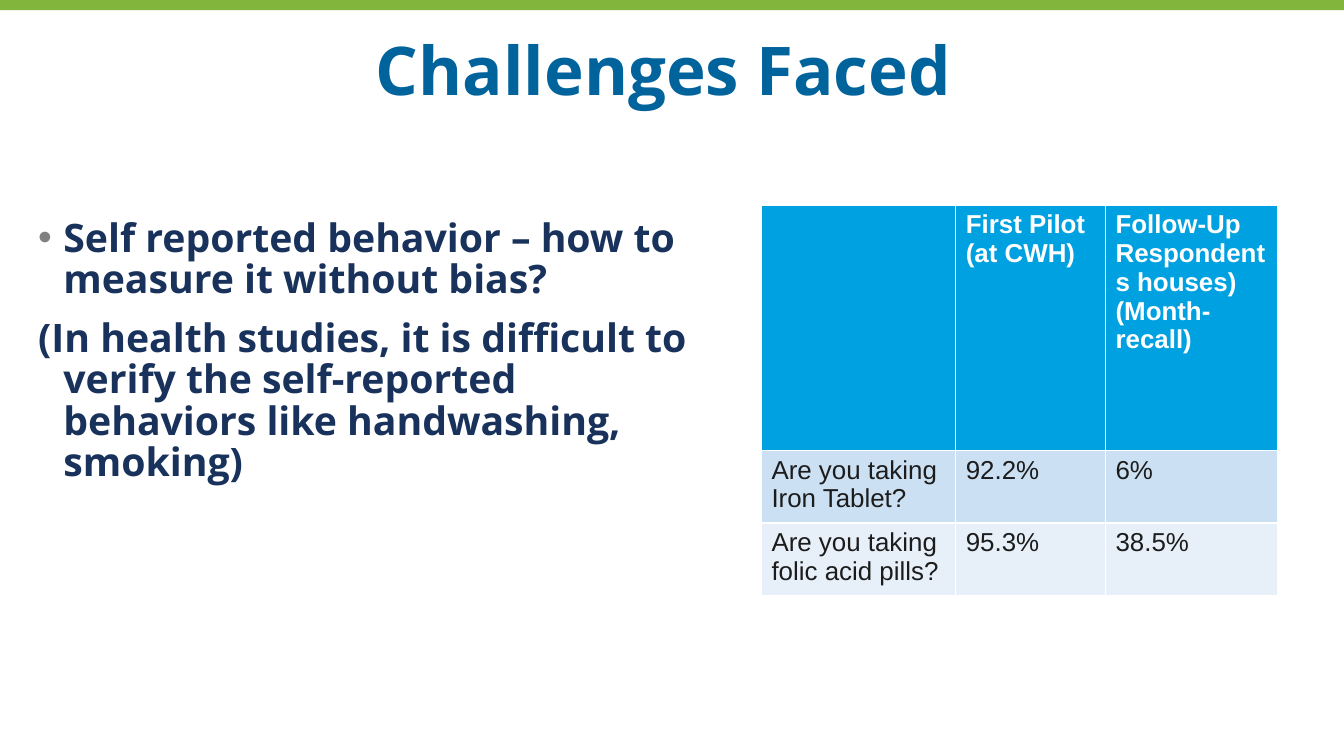
from pptx import Presentation
from pptx.dml.color import RGBColor
from pptx.enum import shapes, text
from pptx.oxml import parse_xml
from pptx.oxml.ns import nsdecls
from pptx.util import Pt

GREEN = RGBColor(0x81, 0xB5, 0x3C)
TITLE_BLUE = RGBColor(0x00, 0x63, 0x9C)
NAVY = RGBColor(0x19, 0x32, 0x5C)
HEADER_BLUE = RGBColor(0x00, 0xA1, 0xE0)
BAND_BLUE = RGBColor(0xCC, 0xE0, 0xF3)
PALE_BLUE = RGBColor(0xE7, 0xF0, 0xF9)
WHITE = RGBColor(0xFF, 0xFF, 0xFF)
INK = RGBColor(0x1C, 0x1C, 0x1C)


def write(frame, content, *, size, font, color, bold=False,
          align=text.PP_ALIGN.LEFT, spacing=1.0):
    """Fill a text frame, one paragraph per line of content."""
    frame.word_wrap = True
    frame.text = content
    for paragraph in frame.paragraphs:
        paragraph.alignment = align
        paragraph.line_spacing = spacing
        for run in paragraph.runs:
            run.font.size = Pt(size)
            run.font.name = font
            run.font.bold = bold
            run.font.color.rgb = color


presentation = Presentation()
presentation.slide_width, presentation.slide_height = Pt(960), Pt(540)
slide = presentation.slides.add_slide(presentation.slide_layouts[5])

# Green bar along the top
bar = slide.shapes.add_shape(shapes.MSO_SHAPE.RECTANGLE, 0, 0, Pt(960), Pt(7.2))
bar.shadow.inherit = False
bar.fill.solid()
bar.fill.fore_color.rgb = GREEN
bar.line.fill.background()

# Title
title = slide.shapes.title
title.left, title.top, title.width, title.height = Pt(26.6), Pt(7.2), Pt(907.2), Pt(71.3)
frame = title.text_frame
frame.auto_size = text.MSO_AUTO_SIZE.NONE
frame.vertical_anchor = text.MSO_ANCHOR.BOTTOM
frame.margin_left = frame.margin_top = frame.margin_right = frame.margin_bottom = 0
write(frame, "Challenges Faced ", size=48, font="Open Sans", color=TITLE_BLUE,
      bold=True, align=text.PP_ALIGN.CENTER, spacing=0.9)

# Challenge on the left
body = slide.shapes.add_textbox(Pt(26.6), Pt(108.7), Pt(481.7), Pt(380.9))
frame = body.text_frame
frame.margin_left, frame.margin_top = Pt(0.7), Pt(48)
frame.margin_right = frame.margin_bottom = 0
write(frame,
      "Self reported behavior – how to measure it without bias?\n"
      "(In health studies, it is difficult to verify the self-reported "
      "behaviors like handwashing, smoking)",
      size=28, font="Open Sans", color=NAVY, bold=True, spacing=0.88)
for paragraph in frame.paragraphs:
    paragraph.space_after = Pt(6)
    properties = paragraph._p.get_or_add_pPr()
    properties.set("marL", str(Pt(18)))
    properties.set("indent", str(-Pt(18)))
challenge, remark = frame.paragraphs
remark.space_before = Pt(6)
for bullet in (
    f'<a:buClr {nsdecls("a")}><a:srgbClr val="808080"/></a:buClr>',
    f'<a:buFont {nsdecls("a")} typeface="Arial"/>',
    f'<a:buChar {nsdecls("a")} char="•"/>',
):
    challenge._p.pPr.append(parse_xml(bullet))

# Table of pilot and follow-up answers
rows = [
    ["", "First Pilot\n(at CWH)", "Follow-Up\nRespondents houses)\n(Month-recall)"],
    ["Are you taking Iron Tablet?", "92.2%", "6%"],
    ["Are you taking folic acid pills?", "95.3%", "38.5%"],
]
row_heights = [175.5, 49.5, 49.5]
column_widths = [138.8, 107, 122.8]
row_fills = [HEADER_BLUE, BAND_BLUE, PALE_BLUE]
table = slide.shapes.add_table(3, 3, Pt(543.9), Pt(146.4), Pt(sum(column_widths)),
                               Pt(sum(row_heights))).table
for column, width in zip(table.columns, column_widths):
    column.width = Pt(width)
for r, (row, height, fill) in enumerate(zip(rows, row_heights, row_fills)):
    table.rows[r].height = Pt(height)
    for c, content in enumerate(row):
        cell = table.cell(r, c)
        cell.fill.solid()
        cell.fill.fore_color.rgb = fill
        write(cell.text_frame, content, size=18.5, font="Arial",
              color=WHITE if r == 0 else INK, bold=r == 0)

presentation.save("out.pptx")
